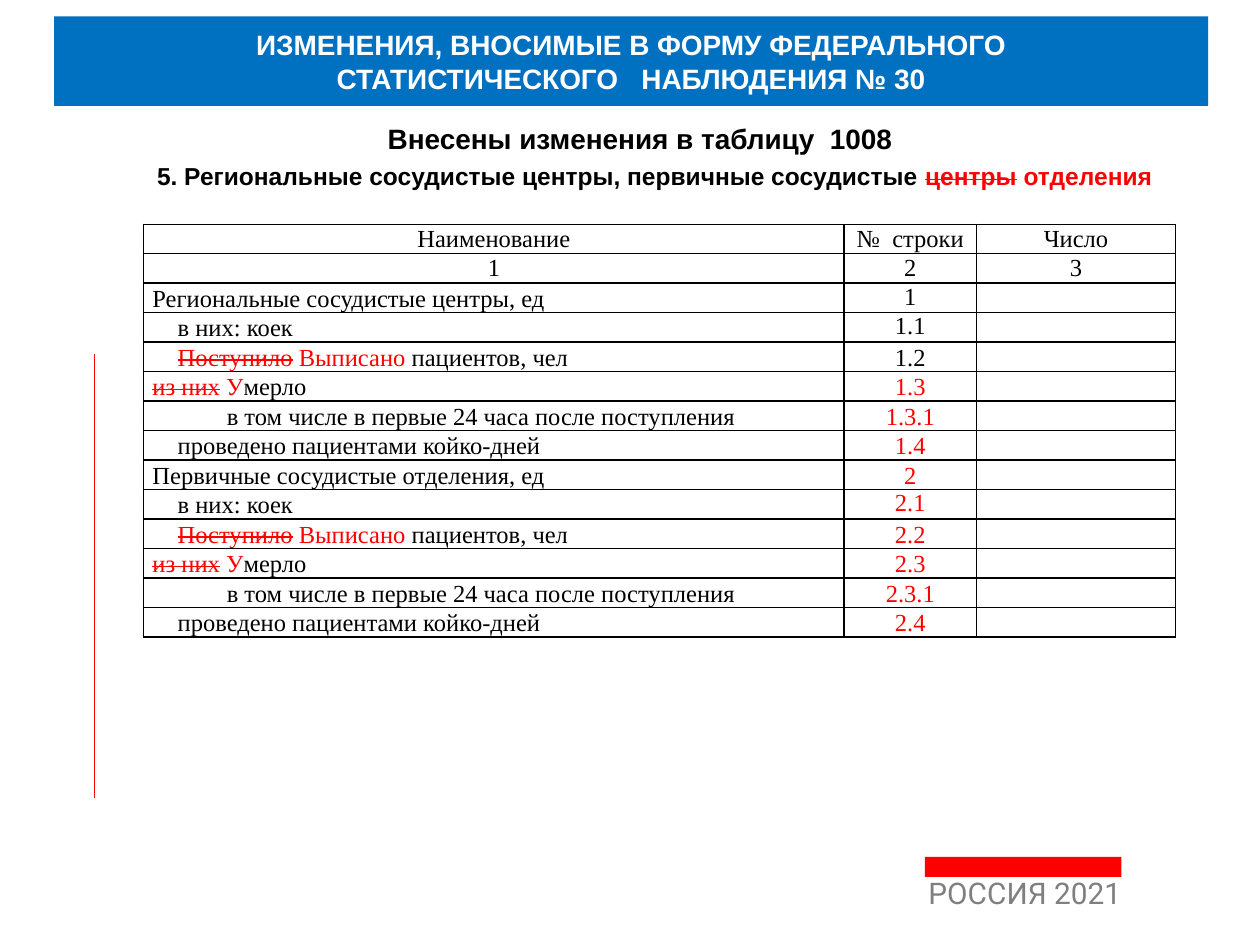
from lxml import etree
from pptx import Presentation
from pptx.dml.color import RGBColor
from pptx.enum.shapes import MSO_CONNECTOR as CONN, MSO_SHAPE as SHAPE
from pptx.enum.text import MSO_ANCHOR as ANCHOR, PP_ALIGN as ALIGN
from pptx.oxml.ns import qn
from pptx.util import Inches, Pt

RED, BLACK, WHITE, BLUE, GRAY = "FF0000", "000000", "FFFFFF", "0070C0", "7F7F7F"
SERIF = "Times New Roman"
COLUMNS = [5.56, 1.05, 1.58]
ROW_HEIGHT = 3.27 / 14

# Text with its indent in inches; a run is (text, colour, struck through)
DISCHARGED = [("Поступило", RED, True), (" Выписано", RED, False),
              (" пациентов, чел", BLACK, False)]
DIED = [("из них", RED, True), (" У", RED, False), ("мерло", BLACK, False)]
DETAILS = [
    (".1", "в них: коек", 0.2),
    (".2", DISCHARGED, 0.2),
    (".3", DIED, 0),
    (".3.1", "в том числе в первые 24 часа после поступления", 0.59),
    (".4", "проведено пациентами койко-дней", 0.2),
]
SECTIONS = [("1", "Региональные сосудистые центры, ед"),
            ("2", "Первичные сосудистые отделения, ед")]
BLACK_NUMBERS = {"1", "1.1", "1.2"}
TOP_NUMBERS = {"1", "1.1", "2.1"}


def rgb(color):
    return RGBColor.from_string(color)


def write(p, text, size=14, font="Arial", color=BLACK, bold=False, align=ALIGN.CENTER):
    """Fill a paragraph from a string or a list of (text, colour, struck) runs."""
    p.alignment = align
    runs = [(text, color, False)] if isinstance(text, str) else text
    for part, part_color, struck in runs:
        r = p.add_run()
        r.text = part
        r.font.size, r.font.name, r.font.bold = Pt(size), font, bold
        r.font.color.rgb = rgb(part_color)
        if struck:
            r.font._element.set("strike", "sngStrike")


def add_text(s, box, text, wrap=False, anchor=ANCHOR.TOP, **fmt):
    tf = s.shapes.add_textbox(*map(Inches, box)).text_frame
    tf.word_wrap, tf.vertical_anchor = wrap, anchor
    write(tf.paragraphs[0], text, **fmt)
    return tf.paragraphs[0]


def add_bar(s, box, color):
    sp = s.shapes.add_shape(SHAPE.RECTANGLE, *map(Inches, box))
    sp.shadow.inherit = False
    sp.fill.solid()
    sp.fill.fore_color.rgb = rgb(color)
    sp.line.fill.background()
    return sp


def add_line(s, x1, y1, x2, y2, color):
    ln = s.shapes.add_connector(CONN.STRAIGHT, *map(Inches, (x1, y1, x2, y2)))
    ln.line.color.rgb = rgb(color)
    ln.line.width = Pt(0.75)
    etree.SubElement(ln._element.spPr, qn("a:effectLst"))


def set_borders(cell):
    tcPr = cell._tc.get_or_add_tcPr()
    for i, side in enumerate(("lnL", "lnR", "lnT", "lnB")):
        ln = etree.Element(qn("a:" + side), w=str(Pt(1)))
        fill = etree.SubElement(ln, qn("a:solidFill"))
        etree.SubElement(fill, qn("a:srgbClr"), val=BLACK)
        tcPr.insert(i, ln)


def fill_cell(cell, text, anchor=ANCHOR.BOTTOM, indent=0, **fmt):
    cell.margin_left = cell.margin_right = Inches(0.07)
    cell.margin_top = cell.margin_bottom = 0
    cell.vertical_anchor = anchor
    cell.fill.background()
    set_borders(cell)
    p = cell.text_frame.paragraphs[0]
    if text:
        write(p, text, font=SERIF, **fmt)
        p._p.get_or_add_pPr().set("marL", str(Inches(indent)))
    else:
        p._p.get_or_add_endParaRPr().set("sz", "1400")


def add_form(s):
    headers = [("Наименование", "№  строки", "Число"), ("1", "2", "3")]
    rows = []
    for number, title in SECTIONS:
        rows.append((number, title, 0))
        rows += [(number + suffix, text, indent) for suffix, text, indent in DETAILS]

    count = len(headers) + len(rows)
    box = (1.14, 1.78, sum(COLUMNS), ROW_HEIGHT * count)
    table = s.shapes.add_table(count, len(COLUMNS), *map(Inches, box)).table
    table.first_row = table.horz_banding = False
    for col, width in zip(table.columns, COLUMNS):
        col.width = Inches(width)
    for row in table.rows:
        row.height = Inches(ROW_HEIGHT)

    for i, labels in enumerate(headers):
        for j, label in enumerate(labels):
            fill_cell(table.cell(i, j), label, ANCHOR.MIDDLE)
    for i, (number, text, indent) in enumerate(rows, len(headers)):
        fill_cell(table.cell(i, 0), text, indent=indent, align=ALIGN.LEFT)
        fill_cell(table.cell(i, 1), number,
                  ANCHOR.TOP if number in TOP_NUMBERS else ANCHOR.BOTTOM,
                  color=BLACK if number in BLACK_NUMBERS else RED)
        fill_cell(table.cell(i, 2), "")


def main():
    prs = Presentation()
    prs.slide_width, prs.slide_height = Inches(10), Inches(7.5)
    s = prs.slides.add_slide(prs.slide_layouts[6])

    # Footer
    p = add_text(s, (7.27, 6.95, 1.88, 0.47), "РОССИЯ 2021", wrap=True, size=17,
                 font="Roboto", color=GRAY, align=ALIGN.LEFT)
    p.line_spacing, p.space_before = 0.8, Pt(3.4)
    add_bar(s, (7.34, 6.8, 1.56, 0.16), RED)

    # Change mark in the margin
    add_line(s, 0.75, 2.81, 0.75, 6.33, RED)

    # Title banner
    tf = add_bar(s, (0.43, 0.13, 9.16, 0.71), BLUE).text_frame
    tf.vertical_anchor = ANCHOR.MIDDLE
    title = {"size": 16, "color": WHITE, "bold": True}
    write(tf.paragraphs[0], "ИЗМЕНЕНИЯ, ВНОСИМЫЕ В ФОРМУ ФЕДЕРАЛЬНОГО", **title)
    write(tf.add_paragraph(), "СТАТИСТИЧЕСКОГО   НАБЛЮДЕНИЯ № 30", **title)

    # Headings
    add_text(s, (0.59, 0.94, 8.98, 0.32), "Внесены изменения в таблицу  1008",
             anchor=ANCHOR.MIDDLE, size=16, bold=True)
    add_text(s, (1.12, 1.23, 8.15, 0.34), [
        ("5. Региональные сосудистые центры, первичные сосудистые ", BLACK, False),
        ("центры", RED, True), (" отделения", RED, False)], bold=True)

    # Form table
    add_form(s)
    prs.save("out.pptx")


if __name__ == "__main__":
    main()
